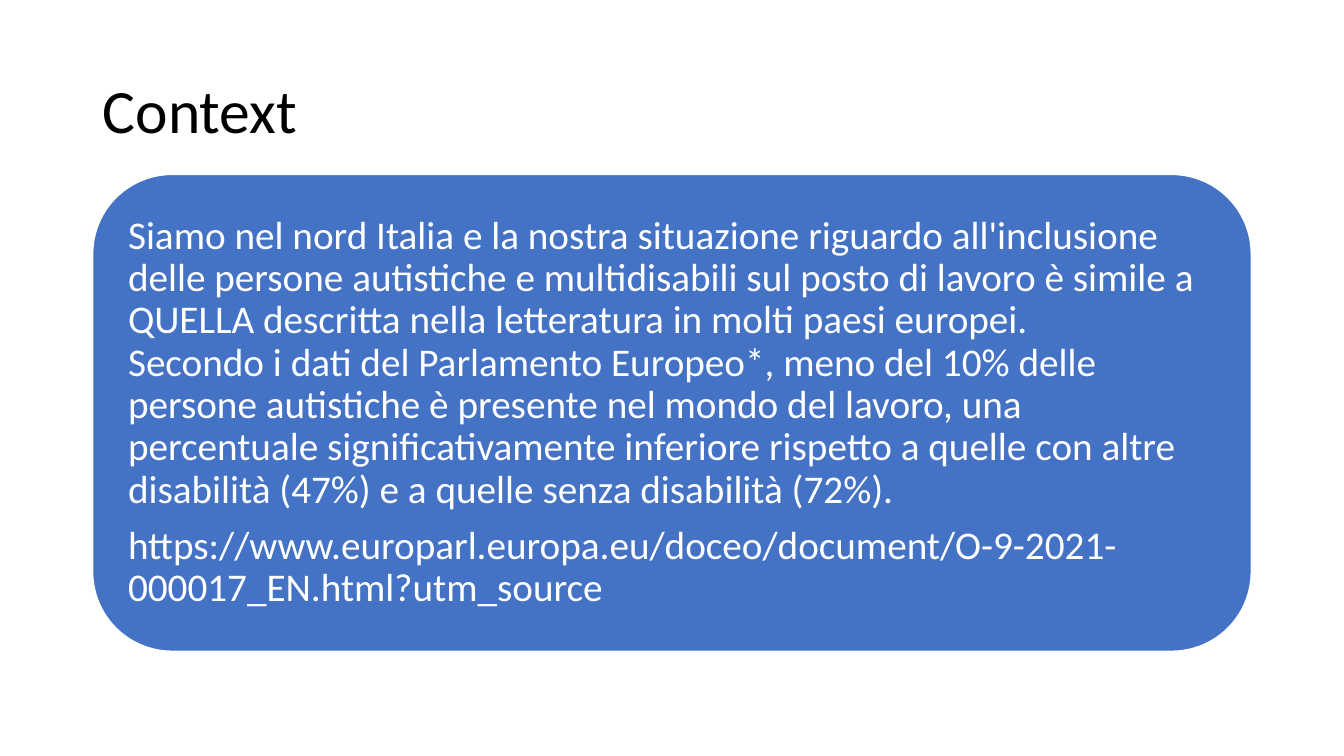
"""Build the "Context" slide: a title above one rounded text panel."""
from pptx import Presentation
from pptx.dml.color import RGBColor
from pptx.enum.shapes import MSO_SHAPE
from pptx.enum.text import MSO_ANCHOR, PP_ALIGN
from pptx.util import Inches, Pt

ROUNDED = MSO_SHAPE.ROUNDED_RECTANGLE
MIDDLE = MSO_ANCHOR.MIDDLE
LEFT = PP_ALIGN.LEFT
TITLE_ONLY = 5

COLORS = {"ink": "000000", "panel": "4472C4", "paper": "FFFFFF"}
COLUMNS, ROWS = 29, 26
MARGIN, SPAN = 2, 25

SITUATION = (
    "Siamo nel nord Italia e la nostra situazione riguardo all'inclusione delle "
    "persone autistiche e multidisabili sul posto di lavoro è simile a QUELLA "
    "descritta nella letteratura in molti paesi europei. \n"
    "Secondo i dati del Parlamento Europeo*, meno del 10% delle persone autistiche "
    "è presente nel mondo del lavoro, una percentuale significativamente inferiore "
    "rispetto a quelle con altre disabilità (47%) e a quelle senza disabilità (72%)."
)
REFERENCE = (
    "https://www.europarl.europa.eu/doceo/document/"
    "O-9-2021-000017_EN.html?utm_source"
)


class ContextSlide:
    font = "Calibri"
    line_spacing = 0.9

    def __init__(self, deck):
        self.column = deck.slide_width / COLUMNS
        self.row = deck.slide_height / ROWS
        self.slide = deck.slides.add_slide(deck.slide_layouts[TITLE_ONLY])

    def box(self, column, row, columns, rows):
        return (round(column * self.column), round(row * self.row),
                round(columns * self.column), round(rows * self.row))

    def set_text(self, frame, texts, size, color, space_after=0):
        frame.word_wrap = True
        frame.vertical_anchor = MIDDLE
        for index, text in enumerate(texts):
            paragraph = frame.add_paragraph() if index else frame.paragraphs[0]
            paragraph.text = text
            paragraph.alignment = LEFT
            paragraph.line_spacing = self.line_spacing
            paragraph.space_after = Pt(space_after)
            paragraph.font.name = self.font
            paragraph.font.size = Pt(size)
            paragraph.font.color.rgb = RGBColor.from_string(COLORS[color])

    def title(self, text, *place):
        heading = self.slide.shapes.title
        heading.left, heading.top, heading.width, heading.height = self.box(*place)
        self.set_text(heading.text_frame, [text], 44, "ink")

    def panel(self, texts, *place):
        panel = self.slide.shapes.add_shape(ROUNDED, *self.box(*place))
        panel.shadow.inherit = False
        panel.fill.solid()
        panel.fill.fore_color.rgb = RGBColor.from_string(COLORS["panel"])
        panel.line.color.rgb = RGBColor.from_string(COLORS["paper"])
        panel.line.width = Pt(1)
        frame = panel.text_frame
        frame.margin_left = frame.margin_right = Inches(0.12)
        frame.margin_top = frame.margin_bottom = Inches(0.12)
        self.set_text(frame, texts, 28, "paper", space_after=10)


def main():
    deck = Presentation()
    deck.slide_width, deck.slide_height = Inches(13.33), Inches(7.5)
    context = ContextSlide(deck)
    context.title("Context", MARGIN, 1.4, SPAN, 5)
    context.panel([SITUATION, REFERENCE], MARGIN, 6, SPAN, 16.4)
    deck.save("out.pptx")


if __name__ == "__main__":
    main()
